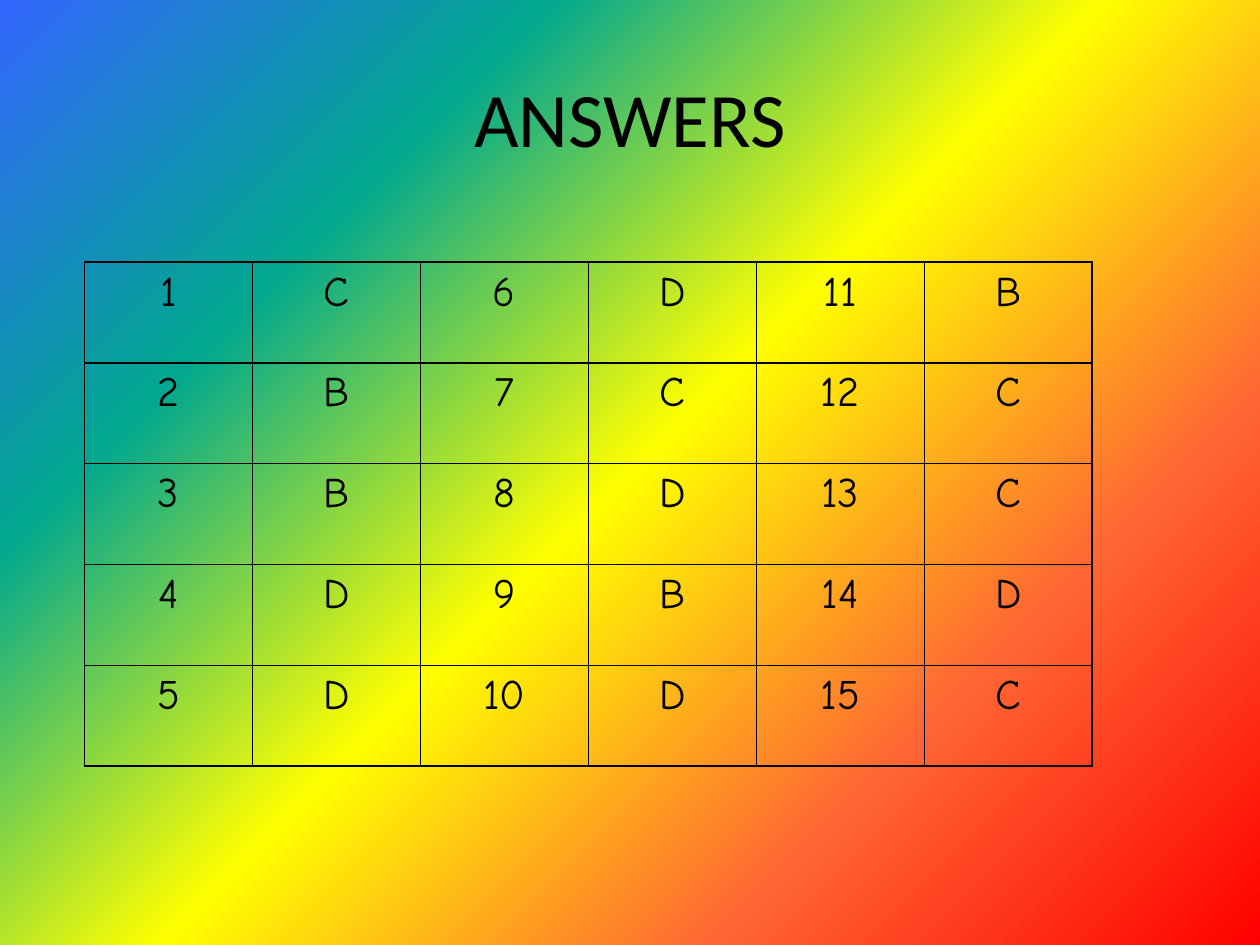
"""Build the answer key slide with its rainbow background and table."""
from pptx import Presentation
from pptx.dml.color import RGBColor
from pptx.enum.text import MSO_ANCHOR, PP_ALIGN
from pptx.oxml import parse_xml
from pptx.oxml.ns import nsdecls
from pptx.util import Inches, Pt

CENTER = PP_ALIGN.CENTER
MIDDLE = MSO_ANCHOR.MIDDLE
TITLE = "ANSWERS"
ANSWERS = "CBBDDDCDBDBCCDC"
ROWS, COLUMNS = 5, 6
INK = "000000"
RAINBOW = ["FF0000", "FF6633", "FFFF00", "01A78F", "3366FF"]
TITLE_BOX = (0.5, 0.3, 9, 1.25)
TABLE_BOX = (0.67, 2.08, 8, 4)
TITLE_FONT = {"name": "Calibri", "size": Pt(44)}
CELL_FONT = {"name": "Comic Neue", "size": Pt(24), "bold": False}


def color(value):
    return RGBColor.from_string(value)


def write(frame, text, font):
    para = frame.paragraphs[0]
    para.alignment = CENTER
    span = para.add_run()
    span.text = text
    for name, value in font.items():
        setattr(span.font, name, value)
    span.font.color.rgb = color(INK)


def paint_background(page):
    step = 100000 // (len(RAINBOW) - 1)
    stops = "".join(
        f'<a:gs pos="{index * step}"><a:srgbClr val="{value}"/></a:gs>'
        for index, value in enumerate(RAINBOW)
    )
    page.element.cSld.insert(0, parse_xml(
        f'<p:bg {nsdecls("p", "a")}><p:bgPr><a:gradFill rotWithShape="1">'
        f'<a:gsLst>{stops}</a:gsLst><a:path path="circle">'
        '<a:fillToRect l="100000" t="100000"/></a:path></a:gradFill>'
        '<a:effectLst/></p:bgPr></p:bg>'
    ))


def add_borders(cell):
    properties = cell._tc.get_or_add_tcPr()
    for index, side in enumerate(("lnL", "lnR", "lnT", "lnB")):
        properties.insert(index, parse_xml(
            f'<a:{side} {nsdecls("a")} w="{Pt(1)}"><a:solidFill>'
            f'<a:srgbClr val="{INK}"/></a:solidFill></a:{side}>'
        ))


def add_title(page):
    title = page.shapes.title
    title.left, title.top, title.width, title.height = map(Inches, TITLE_BOX)
    title.text_frame.vertical_anchor = MIDDLE
    write(title.text_frame, TITLE, TITLE_FONT)


def add_answers(page):
    table = page.shapes.add_table(ROWS, COLUMNS, *map(Inches, TABLE_BOX)).table
    table.first_row = table.horz_banding = False
    for row in range(ROWS):
        for column in range(COLUMNS):
            number = column // 2 * ROWS + row
            text = ANSWERS[number] if column % 2 else str(number + 1)
            cell = table.cell(row, column)
            cell.fill.background()
            add_borders(cell)
            write(cell.text_frame, text, CELL_FONT)


def main():
    deck = Presentation()
    deck.slide_width, deck.slide_height = Inches(10), Inches(7.5)
    page = deck.slides.add_slide(deck.slide_layouts[5])
    paint_background(page)
    add_title(page)
    add_answers(page)
    deck.save("out.pptx")


if __name__ == "__main__":
    main()
